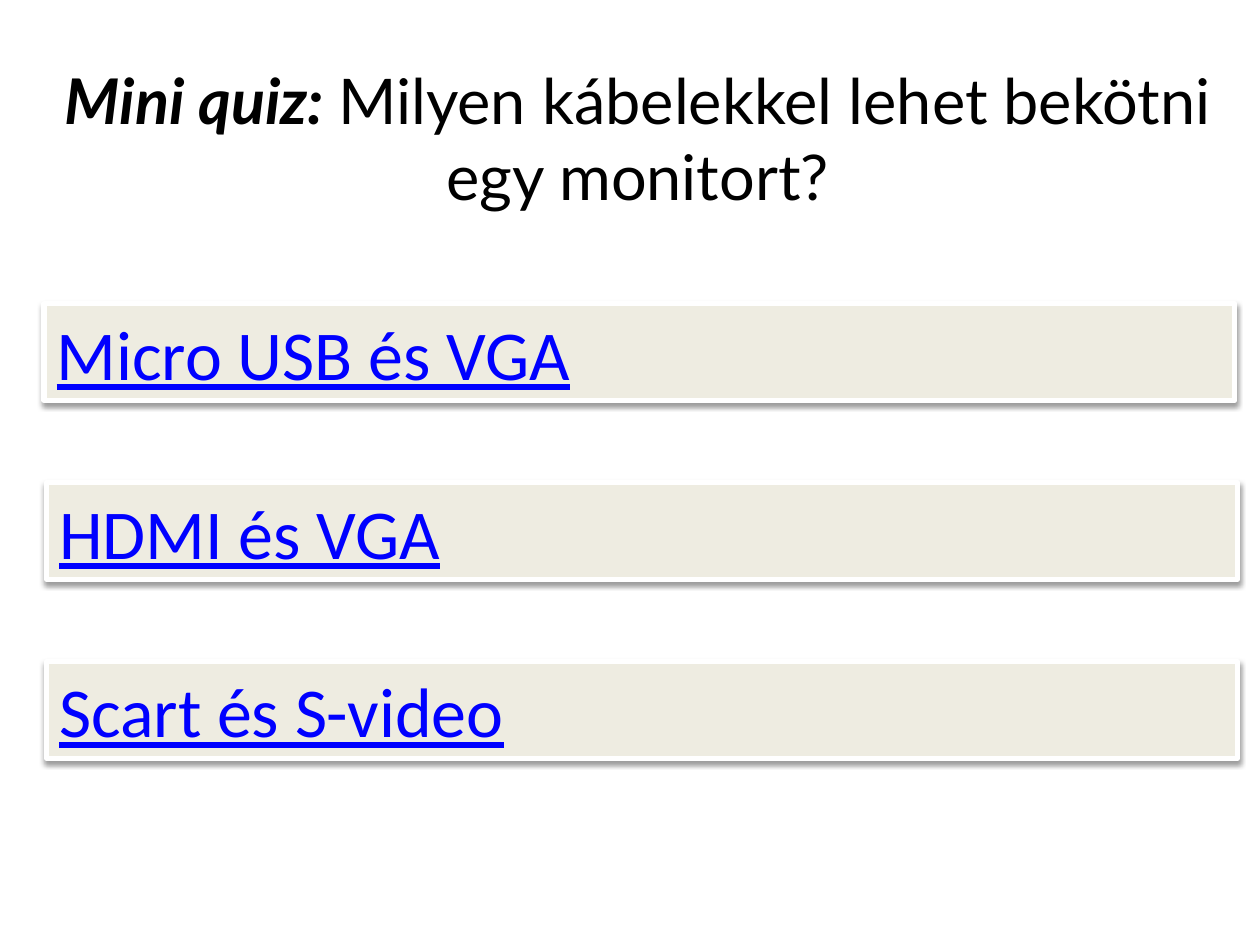
from pptx import Presentation
from pptx.dml.color import RGBColor
from pptx.enum.shapes import MSO_SHAPE
from pptx.enum.text import MSO_ANCHOR, MSO_AUTO_SIZE, PP_ALIGN
from pptx.oxml import parse_xml
from pptx.oxml.ns import nsdecls, qn
from pptx.util import Inches, Pt

RECT = MSO_SHAPE.RECTANGLE
TOP, MID = MSO_ANCHOR.TOP, MSO_ANCHOR.MIDDLE
GROW = MSO_AUTO_SIZE.SHAPE_TO_FIT_TEXT
LEFT, MIDDLE = PP_ALIGN.LEFT, PP_ALIGN.CENTER

WIDE, HIGH = 10, 7.5
LEAD = {"name": "Lato", "size": Pt(36), "bold": True, "italic": True}
ASK = {**LEAD, "bold": False, "italic": False}
LINK = {"name": "Calibri", "size": Pt(40), "underline": True}


def color(code):
    return RGBColor.from_string(code)


class Quiz:
    ink, blue, sand, edge = "000000", "0000FF", "EEECE1", "FFFFFF"
    first, step = 2.41, 1.42  # top of the answer rows and their pitch

    def __init__(self, deck):
        self.slide = deck.slides.add_slide(deck.slide_layouts[5])

    def label(self, par, text, style, code):
        run = par.add_run()
        run.text = text
        for key, value in style.items():
            setattr(run.font, key, value)
        run.font.color.rgb = color(code)

    def frame(self, shape, anchor, align):
        frame = shape.text_frame
        frame.word_wrap = True
        frame.auto_size = GROW
        frame.vertical_anchor = anchor
        par = frame.paragraphs[0]
        par.alignment = align
        return par

    def place(self, shape, left, top, width, height):
        shape.left, shape.top = Inches(left), Inches(top)
        shape.width, shape.height = Inches(width), Inches(height)

    def title(self, parts):
        shape = self.slide.shapes.title
        self.place(shape, 0, 0.44, 10.12, 1.31)
        par = self.frame(shape, TOP, MIDDLE)
        for text, style in parts:
            self.label(par, text, style, self.ink)

    def shade(self, shape):
        shape.shadow.inherit = False
        effects = shape._element.spPr.find(qn("a:effectLst"))
        effects.append(parse_xml(
            f'<a:outerShdw {nsdecls("a")} blurRad="{Pt(3.1)}" dist="{Pt(1.6)}" '
            'dir="5400000" rotWithShape="0"><a:srgbClr val="000000">'
            '<a:alpha val="38000"/></a:srgbClr></a:outerShdw>'))

    def answer(self, row, left, text):
        shape = self.slide.shapes.add_shape(RECT, 0, 0, 0, 0)
        self.place(shape, left, self.first + row * self.step, 9.45, 0.77)
        shape.fill.solid()
        shape.fill.fore_color.rgb = color(self.sand)
        shape.line.color.rgb = color(self.edge)
        shape.line.width = Pt(3)
        self.shade(shape)
        self.label(self.frame(shape, MID, LEFT), text, LINK, self.blue)


def main():
    deck = Presentation()
    deck.slide_width, deck.slide_height = Inches(WIDE), Inches(HIGH)
    quiz = Quiz(deck)

    # Question
    quiz.title([("Mini quiz: ", LEAD),
                ("Milyen kábelekkel lehet bekötni egy monitort?", ASK)])

    # Answers
    answers = [(0.35, "Micro USB és VGA"), (0.37, "HDMI és VGA"),
               (0.37, "Scart és S-video")]
    for row, (left, text) in enumerate(answers):
        quiz.answer(row, left, text)

    deck.save("out.pptx")


if __name__ == "__main__":
    main()
